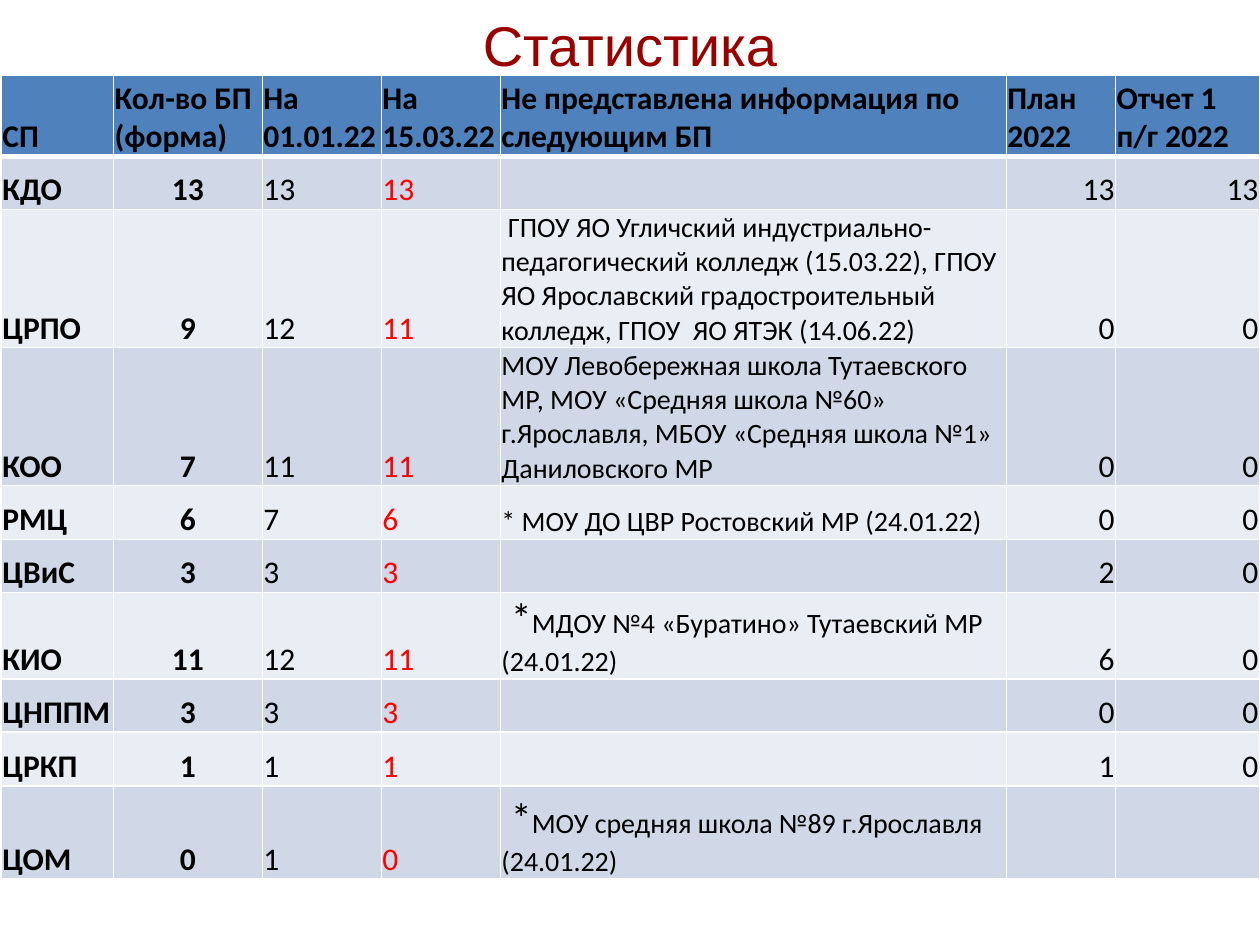
from lxml import etree
from pptx import Presentation
from pptx.dml.color import RGBColor
from pptx.enum.text import MSO_ANCHOR, PP_ALIGN
from pptx.oxml.ns import qn
from pptx.util import Cm, Pt

LEFT, CENTER, RIGHT = PP_ALIGN.LEFT, PP_ALIGN.CENTER, PP_ALIGN.RIGHT
BOTTOM, MIDDLE = MSO_ANCHOR.BOTTOM, MSO_ANCHOR.MIDDLE
WHITE = RGBColor(0xFF, 0xFF, 0xFF)
BLACK = RGBColor(0, 0, 0)
RED = RGBColor(0xFF, 0, 0)
DARK_RED = RGBColor(0x99, 0, 0)
HEADER_BLUE = RGBColor(0x4F, 0x81, 0xBD)
BANDS = [RGBColor(0xE9, 0xED, 0xF4), RGBColor(0xD0, 0xD8, 0xE8)]

HEADERS = ["СП", "Кол-во БП (форма)", "На 01.01.22", "На 15.03.22",
           "Не представлена информация по следующим БП", "План 2022", "Отчет 1 п/г 2022"]
DEPARTMENTS = [
    ["КДО", "13", "13", "13", "", "13", "13"],
    ["ЦРПО", "9", "12", "11",
     " ГПОУ ЯО Угличский индустриально-педагогический колледж (15.03.22), "
     "ГПОУ ЯО Ярославский градостроительный колледж, ГПОУ  ЯО ЯТЭК (14.06.22)", "0", "0"],
    ["КОО", "7", "11", "11",
     "МОУ Левобережная школа Тутаевского МР, МОУ «Средняя школа №60» г.Ярославля, "
     "МБОУ «Средняя школа №1» Даниловского МР", "0", "0"],
    ["РМЦ", "6", "7", "6", "* МОУ ДО ЦВР Ростовский МР (24.01.22)", "0", "0"],
    ["ЦВиС", "3", "3", "3", "", "2", "0"],
    ["КИО", "11", "12", "11", " *|МДОУ №4 «Буратино» Тутаевский МР (24.01.22)", "6", "0"],
    ["ЦНППМ", "3", "3", "3", "", "0", "0"],
    ["ЦРКП", "1", "1", "1", "", "1", "0"],
    ["ЦОМ", "0", "1", "0", " *|МОУ средняя школа №89 г.Ярославля (24.01.22)", "", ""],
]
COLUMN_WIDTHS = [2.26, 3, 2.4, 2.4, 10.2, 2.2, 2.9]
ROW_HEIGHTS = [1.63, 1.07, 2.79, 2.77, 1.08, 1.07, 1.75, 1.07, 1.08, 1.88]
ALIGNMENTS = [LEFT, CENTER, LEFT, LEFT, LEFT, RIGHT, RIGHT]
CELL_FORMAT = {"margin_left": Cm(0.02), "margin_right": Cm(0.02), "margin_top": Cm(0.02),
               "margin_bottom": 0, "vertical_anchor": BOTTOM}
MISSING_INFO = 4


def format_font(font, color, **values):
    for name, value in values.items():
        setattr(font, name, value)
    font.color.rgb = color


def add_borders(cell, bottom_width):
    properties = cell._tc.get_or_add_tcPr()
    for side, width in {"L": 1, "R": 1, "T": 1, "B": bottom_width}.items():
        border = etree.SubElement(properties, qn("a:ln" + side), w=str(Pt(width)))
        fill = etree.SubElement(border, qn("a:solidFill"))
        etree.SubElement(fill, qn("a:srgbClr"), val=str(WHITE))


prs = Presentation()
prs.slide_width, prs.slide_height = Cm(25.4), Cm(19.05)
slide = prs.slides.add_slide(prs.slide_layouts[5])

title = slide.shapes.title
title.left, title.top, title.width, title.height = 0, 0, Cm(25.4), Cm(1.78)
title.fill.solid()
title.fill.fore_color.rgb = WHITE
title.text_frame.text = "Статистика"
title.text_frame.vertical_anchor = MIDDLE
heading = title.text_frame.paragraphs[0]
heading.alignment = CENTER
format_font(heading.runs[0].font, DARK_RED, name="Arial", size=Pt(32))

statistics = slide.shapes.add_table(
    len(ROW_HEIGHTS), len(COLUMN_WIDTHS), Cm(0.03), Cm(1.52),
    Cm(sum(COLUMN_WIDTHS)), Cm(sum(ROW_HEIGHTS))).table
for column, width in zip(statistics.columns, COLUMN_WIDTHS):
    column.width = Cm(width)
for row, height in zip(statistics.rows, ROW_HEIGHTS):
    row.height = Cm(height)

for r, texts in enumerate([HEADERS] + DEPARTMENTS):
    is_header = r == 0
    for c, text in enumerate(texts):
        cell = statistics.cell(r, c)
        for name, value in CELL_FORMAT.items():
            setattr(cell, name, value)
        add_borders(cell, 3 if is_header else 1)
        cell.fill.solid()
        cell.fill.fore_color.rgb = HEADER_BLUE if is_header else BANDS[r % 2]
        paragraph = cell.text_frame.paragraphs[0]
        paragraph.alignment = LEFT if is_header else ALIGNMENTS[c]
        color = RED if c == 3 and not is_header else BLACK
        for part in text.split("|") if text else []:
            size = 16 if c == MISSING_INFO and not is_header else 18
            if part.endswith("*"):
                size = 24
            run = paragraph.add_run()
            run.text = part
            format_font(run.font, color, name="Calibri", size=Pt(size), bold=is_header or c < 2)

prs.save("out.pptx")
